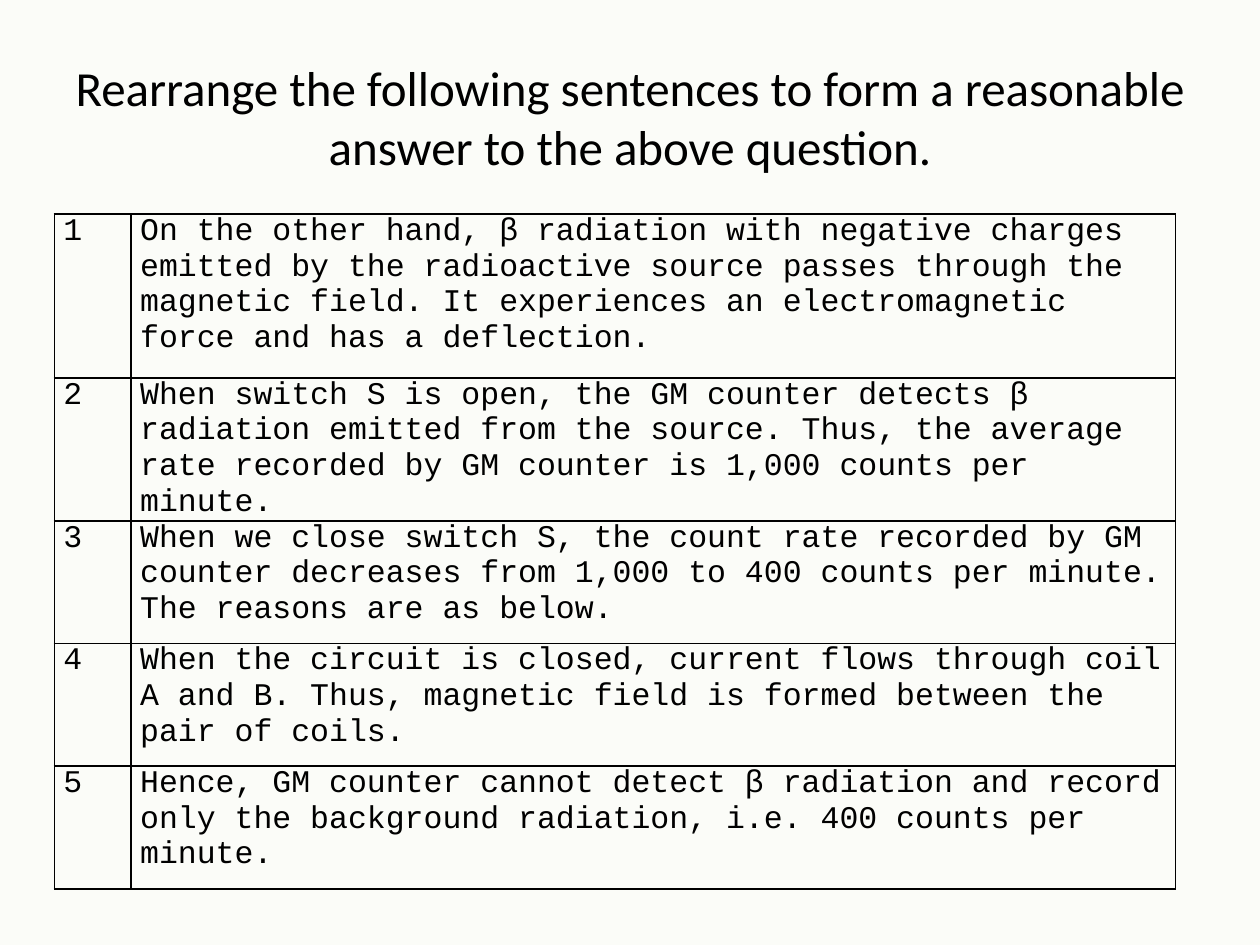
from lxml import etree
from pptx import Presentation
from pptx.dml.color import RGBColor
from pptx.enum.text import MSO_ANCHOR, PP_ALIGN
from pptx.oxml.ns import qn
from pptx.util import Pt

LEFT, CENTER = PP_ALIGN.LEFT, PP_ALIGN.CENTER
TOP, MIDDLE = MSO_ANCHOR.TOP, MSO_ANCHOR.MIDDLE
BLACK = RGBColor(0x00, 0x00, 0x00)
PALE_GREEN = RGBColor(0xFB, 0xFC, 0xF8)

TITLE = "Rearrange the following sentences to form a reasonable answer to the above question."
SENTENCES = [
    "On the other hand, β radiation with negative charges emitted by the radioactive source "
    "passes through the magnetic field. It experiences an electromagnetic force and has a "
    "deflection.",
    "When switch S is open, the GM counter detects β radiation emitted from the source. Thus, "
    "the average rate recorded by GM counter is 1,000 counts per minute.",
    "When we close switch S, the count rate recorded by GM counter decreases from 1,000 to 400 "
    "counts per minute. The reasons are as below.",
    "When the circuit is closed, current flows through coil A and B. Thus, magnetic field is "
    "formed between the pair of coils.",
    "Hence, GM counter cannot detect β radiation and record only the background radiation, "
    "i.e. 400 counts per minute.",
]

TABLE_LEFT, TABLE_TOP = 31, 122.4
COLUMN_WIDTHS = [43.9, 596.9]
FIRST_ROW_HEIGHT, ROW_HEIGHT = 93.6, 70.1
CELL_MARGIN = 5.2


def write_text(text_frame, text, *, font, size, align=LEFT):
    paragraph = text_frame.paragraphs[0]
    paragraph.alignment = align
    run = paragraph.add_run()
    run.text = text
    run.font.name = font
    run.font.size = Pt(size)
    run.font.color.rgb = BLACK


def add_borders(cell, width=1):
    properties = cell._tc.get_or_add_tcPr()
    for position, side in enumerate(("lnL", "lnR", "lnT", "lnB")):
        line = etree.Element(qn(f"a:{side}"), w=str(Pt(width)))
        fill = etree.SubElement(line, qn("a:solidFill"))
        etree.SubElement(fill, qn("a:srgbClr"), val=str(BLACK))
        properties.insert(position, line)


def add_title(slide):
    title = slide.shapes.title
    title.left, title.top, title.width, title.height = Pt(36), Pt(21.6), Pt(648), Pt(90)
    title.text_frame.word_wrap = True
    title.text_frame.vertical_anchor = MIDDLE
    write_text(title.text_frame, TITLE, font="Calibri", size=28, align=CENTER)


def add_sentence_table(slide):
    row_heights = [FIRST_ROW_HEIGHT] + [ROW_HEIGHT] * (len(SENTENCES) - 1)
    table = slide.shapes.add_table(
        len(SENTENCES), len(COLUMN_WIDTHS), Pt(TABLE_LEFT), Pt(TABLE_TOP),
        Pt(sum(COLUMN_WIDTHS)), Pt(sum(row_heights))).table
    table.first_row = table.horz_banding = False
    for column, width in zip(table.columns, COLUMN_WIDTHS):
        column.width = Pt(width)
    for number, (row, height, sentence) in enumerate(
            zip(table.rows, row_heights, SENTENCES), start=1):
        row.height = Pt(height)
        for cell, text in zip(row.cells, (str(number), sentence)):
            cell.margin_left = cell.margin_right = Pt(CELL_MARGIN)
            cell.margin_top = cell.margin_bottom = 0
            cell.vertical_anchor = TOP
            cell.fill.background()
            add_borders(cell)
            write_text(cell.text_frame, text, font="Courier New", size=18)


def main():
    presentation = Presentation()
    presentation.slide_width, presentation.slide_height = Pt(720), Pt(540)
    slide = presentation.slides.add_slide(presentation.slide_layouts.get_by_name("Title Only"))
    slide.background.fill.solid()
    slide.background.fill.fore_color.rgb = PALE_GREEN
    add_title(slide)
    add_sentence_table(slide)
    presentation.save("out.pptx")


if __name__ == "__main__":
    main()
